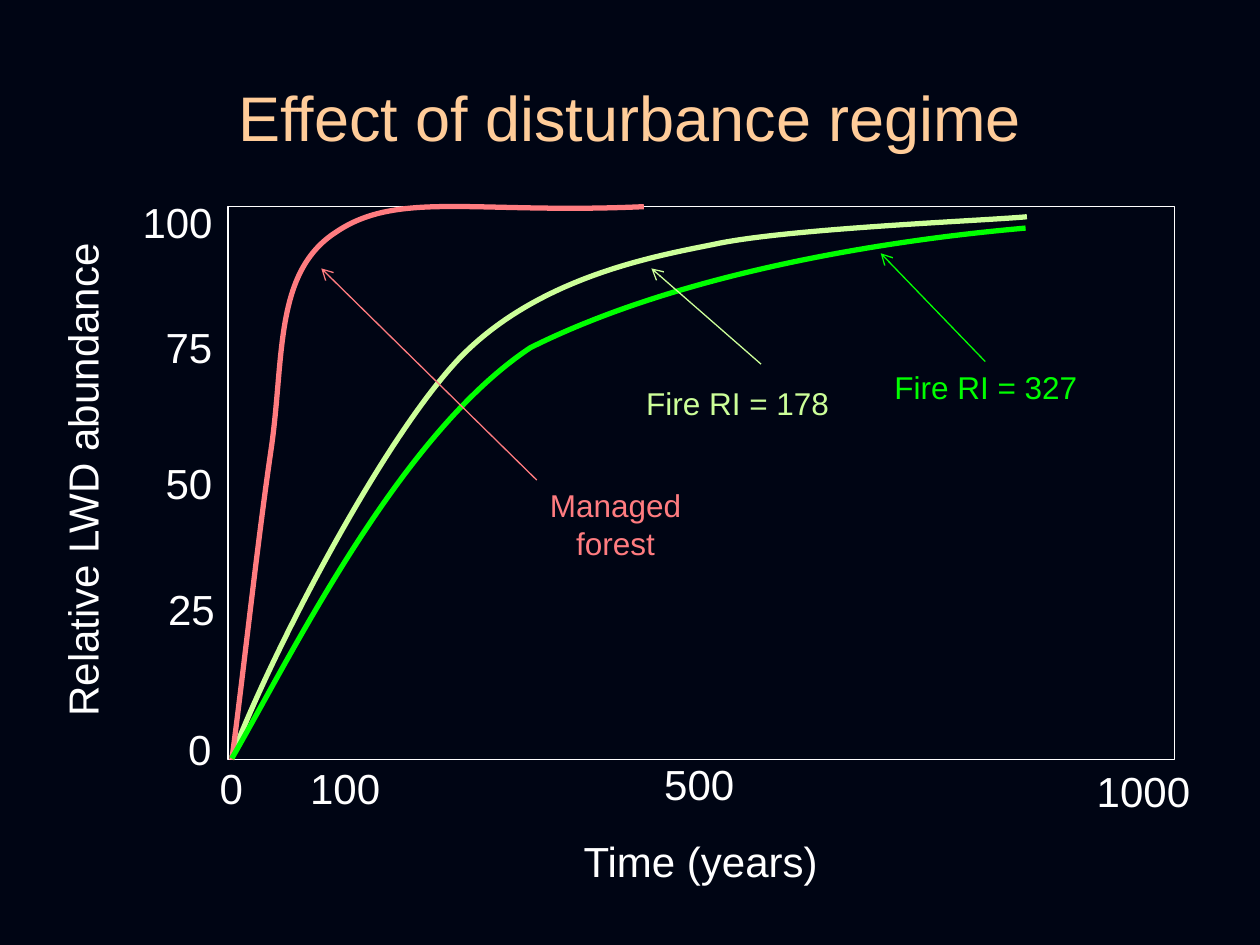
import pptx
import pptx.dml.color
import pptx.enum.shapes
import pptx.enum.text
import pptx.oxml.ns
import pptx.util
from lxml import etree

Inches = pptx.util.Inches
RGBColor = pptx.dml.color.RGBColor
qn = pptx.oxml.ns.qn

NAVY = RGBColor(0x00, 0x05, 0x14)
PEACH = RGBColor(0xFF, 0xCC, 0x99)
WHITE = RGBColor(0xFF, 0xFF, 0xFF)
RED = RGBColor(0xFF, 0x7C, 0x80)
LIME = RGBColor(0xCC, 0xFF, 0x99)
GREEN = RGBColor(0x00, 0xFF, 0x00)

FONT = "Arial"

# Each curve: start point, then two controls and an end point per segment
LIME_CURVE = [(1.84, 6.01), (2.11, 5.28), (3, 3.53), (3.64, 2.85),
              (4.29, 2.17), (5.28, 2.02), (5.71, 1.93),
              (6.32, 1.81), (7.84, 1.75), (8.15, 1.72)]
RED_CURVE = [(1.84, 6.03), (1.93, 5.36), (2.04, 4.33), (2.15, 3.58),
             (2.26, 2.84), (2.17, 2.16), (2.67, 1.84),
             (3.16, 1.51), (3.78, 1.7), (5.11, 1.64)]
GREEN_CURVE = [(1.84, 6.02), (2.33, 5.17), (3.17, 3.45), (4.21, 2.76),
               (5.71, 2.01), (7.83, 1.84), (8.14, 1.81)]

# Text, left, top, width
AXIS_LABELS = [
    ("1000", 8.6, 6.03, 0.95), ("100", 2.36, 6, 0.76),
    ("500", 5.17, 5.97, 0.76), ("0", 1.64, 6, 0.39),
    ("100", 1.03, 1.51, 0.76), ("75", 1.21, 2.5, 0.58),
    ("50", 1.21, 3.58, 0.58), ("25", 1.23, 4.58, 0.58),
    ("0", 1.39, 5.69, 0.39),
]


def format_text(text_frame, size, color):
    for paragraph in text_frame.paragraphs:
        paragraph.alignment = pptx.enum.text.PP_ALIGN.CENTER
        for run in paragraph.runs:
            run.font.name = FONT
            run.font.size = pptx.util.Pt(size)
            run.font.color.rgb = color


def set_line(shape, color, width):
    shape.line.color.rgb = color
    shape.line.width = pptx.util.Pt(width)


def add_title(slide, text):
    title = slide.shapes.title
    title.left, title.top = Inches(0.5), Inches(0.3)
    title.width, title.height = Inches(9), Inches(1.25)
    title.text_frame.text = text
    title.text_frame.vertical_anchor = pptx.enum.text.MSO_ANCHOR.MIDDLE
    format_text(title.text_frame, 36, PEACH)


def add_plot_frame(slide):
    frame = slide.shapes.add_shape(
        pptx.enum.shapes.MSO_SHAPE.RECTANGLE,
        Inches(1.81), Inches(1.64), Inches(7.51), Inches(4.39))
    frame.shadow.inherit = False
    frame.fill.background()
    set_line(frame, WHITE, 0.75)


def add_label(slide, text, left, top, width, height=0.5, size=24,
              color=WHITE, rotation=0):
    label = slide.shapes.add_textbox(
        Inches(left), Inches(top), Inches(width), Inches(height))
    label.rotation = rotation
    label.text_frame.word_wrap = False
    label.text_frame.auto_size = pptx.enum.text.MSO_AUTO_SIZE.SHAPE_TO_FIT_TEXT
    label.text_frame.text = text
    format_text(label.text_frame, size, color)


def add_curve(slide, points, color):
    points = [(Inches(x), Inches(y)) for x, y in points]
    builder = slide.shapes.build_freeform(*points[0])
    builder.add_line_segments(points[3::3], close=False)
    curve = builder.convert_to_shape()
    curve.shadow.inherit = False
    curve.fill.background()
    set_line(curve, color, 3)

    # Turn each straight piece into a Bezier segment
    pieces = list(curve.element.iter(qn("a:lnTo")))
    for index, piece in enumerate(pieces):
        bezier = etree.Element(qn("a:cubicBezTo"))
        for x, y in points[3 * index + 1:3 * index + 4]:
            etree.SubElement(bezier, qn("a:pt"),
                             x=str(x - curve.left), y=str(y - curve.top))
        piece.getparent().replace(piece, bezier)


def add_arrow(slide, start, end, color):
    arrow = slide.shapes.add_connector(
        pptx.enum.shapes.MSO_CONNECTOR.STRAIGHT,
        *(Inches(value) for value in start + end))
    set_line(arrow, color, 0.75)
    properties = arrow.element.spPr
    etree.SubElement(properties.find(qn("a:ln")), qn("a:tailEnd"), type="arrow")
    etree.SubElement(properties, qn("a:effectLst"))


def main():
    presentation = pptx.Presentation()
    presentation.slide_width = Inches(10)
    presentation.slide_height = Inches(7.5)
    slide = presentation.slides.add_slide(presentation.slide_layouts[5])
    slide.background.fill.solid()
    slide.background.fill.fore_color.rgb = NAVY
    add_title(slide, "Effect of disturbance regime")

    # Plot area and the curve behind the labels
    add_plot_frame(slide)
    add_curve(slide, LIME_CURVE, LIME)

    # Axis titles and values
    add_label(slide, "Time (years)", 4.52, 6.58, 2.08)
    add_label(slide, "Relative LWD abundance", -1.34, 3.56, 3.98, rotation=270)
    for text, left, top, width in AXIS_LABELS:
        add_label(slide, text, left, top, width)

    # Front curves
    add_curve(slide, RED_CURVE, RED)
    add_curve(slide, GREEN_CURVE, GREEN)

    # Curve names with their arrows
    add_label(slide, "Fire RI = 178", 5.02, 3, 1.67, 0.4, 18, LIME)
    add_label(slide, "Fire RI = 327", 6.99, 2.87, 1.67, 0.4, 18, GREEN)
    add_arrow(slide, (6.04, 2.89), (5.17, 2.13), LIME)
    add_arrow(slide, (7.82, 2.87), (6.99, 2.01), GREEN)
    add_label(slide, "Managed\nforest", 4.26, 3.81, 1.25, 0.71, 18, RED)
    add_arrow(slide, (4.26, 3.81), (2.55, 2.13), RED)

    presentation.save("out.pptx")


if __name__ == "__main__":
    main()
